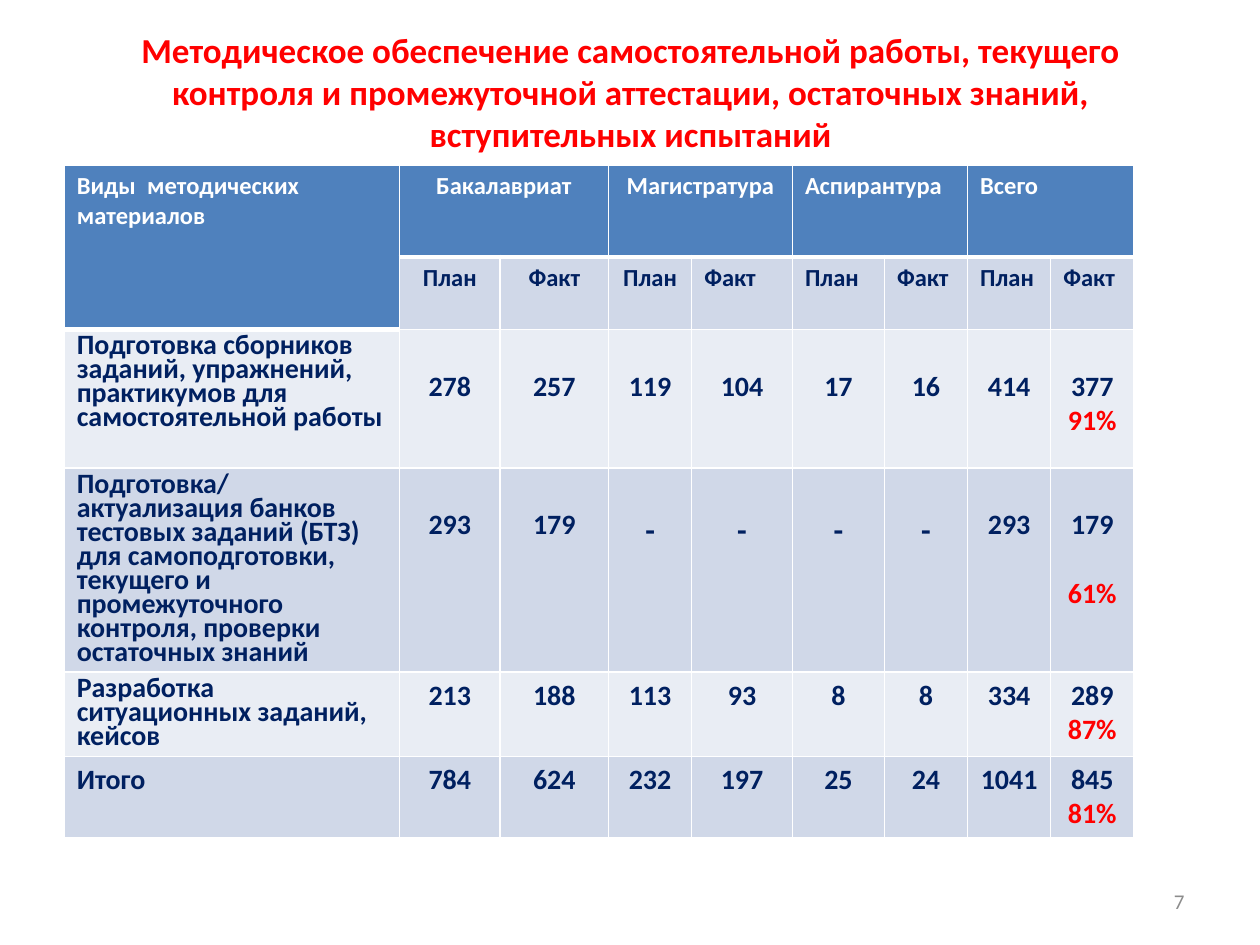
from lxml.etree import SubElement
from pptx import Presentation
from pptx.dml.color import RGBColor
from pptx.enum.text import MSO_ANCHOR as Anchor, MSO_AUTO_SIZE as AutoSize, PP_ALIGN as Align
from pptx.oxml.ns import qn
from pptx.util import Inches, Pt

COLORS = {"red": "FF0000", "navy": "002060", "white": "FFFFFF", "gray": "8C8C8C",
          "head": "4F81BD", "dark": "D0D8E8", "light": "E9EDF4"}
TITLE = ("Методическое обеспечение самостоятельной работы, текущего контроля и "
         "промежуточной аттестации, остаточных знаний, вступительных испытаний")
CORNER = "Виды  методических материалов"
LEVELS = ["Бакалавриат", "Магистратура", "Аспирантура", "Всего"]
MEASURES = ["План", "Факт"]
CENTERED_LEVELS = 2
CENTERED_MEASURES = 3
ROWS = [
    {"name": "Подготовка сборников заданий, упражнений, практикумов для самостоятельной работы",
     "values": ["278", "257", "119", "104", "17", "16", "414", "377"],
     "share": "91%", "drop": 0.27, "gap": 0, "spacing": 0.7},
    {"name": "Подготовка/актуализация банков тестовых заданий (БТЗ) для самоподготовки, "
             "текущего и промежуточного контроля, проверки остаточных знаний",
     "values": ["293", "179", "-", "-", "-", "-", "293", "179"],
     "share": "61%", "drop": 0.27, "gap": 19.5, "spacing": 0.7},
    {"name": "Разработка ситуационных заданий, кейсов",
     "values": ["213", "188", "113", "93", "8", "8", "334", "289"],
     "share": "87%", "drop": 0, "gap": 0, "spacing": 0.7},
    {"name": "Итого",
     "values": ["784", "624", "232", "197", "25", "24", "1041", "845"],
     "share": "81%", "drop": 0, "gap": 0, "spacing": 1},
]
WIDTHS = [2.66, 0.8, 0.86, 0.66, 0.8, 0.73, 0.66, 0.66, 0.66]
HEIGHTS = [0.73, 0.57, 1.1, 1.62, 0.67, 0.64]


def rgb(name):
    return RGBColor.from_string(COLORS[name])


def write(p, text, size, color, bold=True, **layout):
    """Add a formatted run to a paragraph and apply its layout values."""
    r = p.add_run()
    r.text = text
    for key, value in {"name": "Calibri", "size": Pt(size), "bold": bold}.items():
        setattr(r.font, key, value)
    r.font.color.rgb = rgb(color)
    for key, value in layout.items():
        setattr(p, key, value)


def style(cell, fill, bottom):
    """Give a cell white borders and a solid fill."""
    tc_pr = cell._tc.get_or_add_tcPr()
    for side, width in {"lnL": 1, "lnR": 1, "lnT": 1, "lnB": bottom}.items():
        line = SubElement(tc_pr, qn(f"a:{side}"), w=str(Pt(width)))
        solid = SubElement(line, qn("a:solidFill"))
        SubElement(solid, qn("a:srgbClr"), val=COLORS["white"])
    cell.fill.solid()
    cell.fill.fore_color.rgb = rgb(fill)


def add_title(s):
    """Place the slide title."""
    sp = s.shapes.title
    box = {"left": 0.51, "top": 0.3, "width": 8.99, "height": 0.85}
    for key, value in box.items():
        setattr(sp, key, Inches(value))
    tf = sp.text_frame
    for key, value in {"word_wrap": True, "auto_size": AutoSize.NONE,
                       "vertical_anchor": Anchor.MIDDLE}.items():
        setattr(tf, key, value)
    write(tf.paragraphs[0], TITLE, 20, "red", alignment=Align.CENTER)


def add_header(table):
    """Fill the two header rows."""
    write(table.cell(0, 0).text_frame.paragraphs[0], CORNER, 14, "white")
    table.cell(0, 0).merge(table.cell(1, 0))
    for i, level in enumerate(LEVELS):
        col = 1 + i * len(MEASURES)
        cell = table.cell(0, col)
        cell.merge(table.cell(0, col + 1))
        write(cell.text_frame.paragraphs[0], level, 14, "white",
              alignment=Align.CENTER if i < CENTERED_LEVELS else Align.LEFT)
        for c, measure in enumerate(MEASURES, col):
            write(table.cell(1, c).text_frame.paragraphs[0], measure, 14, "navy",
                  alignment=Align.CENTER if c <= CENTERED_MEASURES else Align.LEFT)


def add_row(table, i, row):
    """Fill one body row with its name, values and share."""
    write(table.cell(i, 0).text_frame.paragraphs[0], row["name"], 16, "navy",
          line_spacing=row["spacing"])
    for c, value in enumerate(row["values"], 1):
        cell = table.cell(i, c)
        dash = value == "-"
        cell.margin_top = Inches(0.05 + row["drop"] + 0.03 * dash)
        write(cell.text_frame.paragraphs[0], value, 18 if dash else 16, "navy",
              alignment=Align.CENTER)
    write(cell.text_frame.add_paragraph(), row["share"], 16, "red",
          alignment=Align.CENTER, space_before=Pt(row["gap"]))


def add_table(s):
    """Build the table of plan and actual figures."""
    table = s.shapes.add_table(len(HEIGHTS), len(WIDTHS), Inches(0.51), Inches(1.31),
                               Inches(sum(WIDTHS)), Inches(sum(HEIGHTS))).table
    for column, width in zip(table.columns, WIDTHS):
        column.width = Inches(width)
    for i, height in enumerate(HEIGHTS):
        table.rows[i].height = Inches(height)
        for c in range(len(WIDTHS)):
            head = i == 0 or (i == 1 and c == 0)
            fill = "head" if head else "dark" if i % 2 else "light"
            style(table.cell(i, c), fill, 3 if head else 1)
    add_header(table)
    for i, row in enumerate(ROWS, 2):
        add_row(table, i, row)


def add_number(s):
    """Place the slide number."""
    sp = s.shapes.add_textbox(Inches(7.17), Inches(6.95), Inches(2.33), Inches(0.4))
    tf = sp.text_frame
    tf.word_wrap = True
    tf.vertical_anchor = Anchor.MIDDLE
    write(tf.paragraphs[0], "7", 12, "gray", bold=False, alignment=Align.RIGHT)


def main():
    """Build and save the slide."""
    prs = Presentation()
    prs.slide_width, prs.slide_height = Inches(10), Inches(7.5)
    s = prs.slides.add_slide(prs.slide_layouts[5])
    add_title(s)
    add_table(s)
    add_number(s)
    prs.save("out.pptx")


if __name__ == "__main__":
    main()
